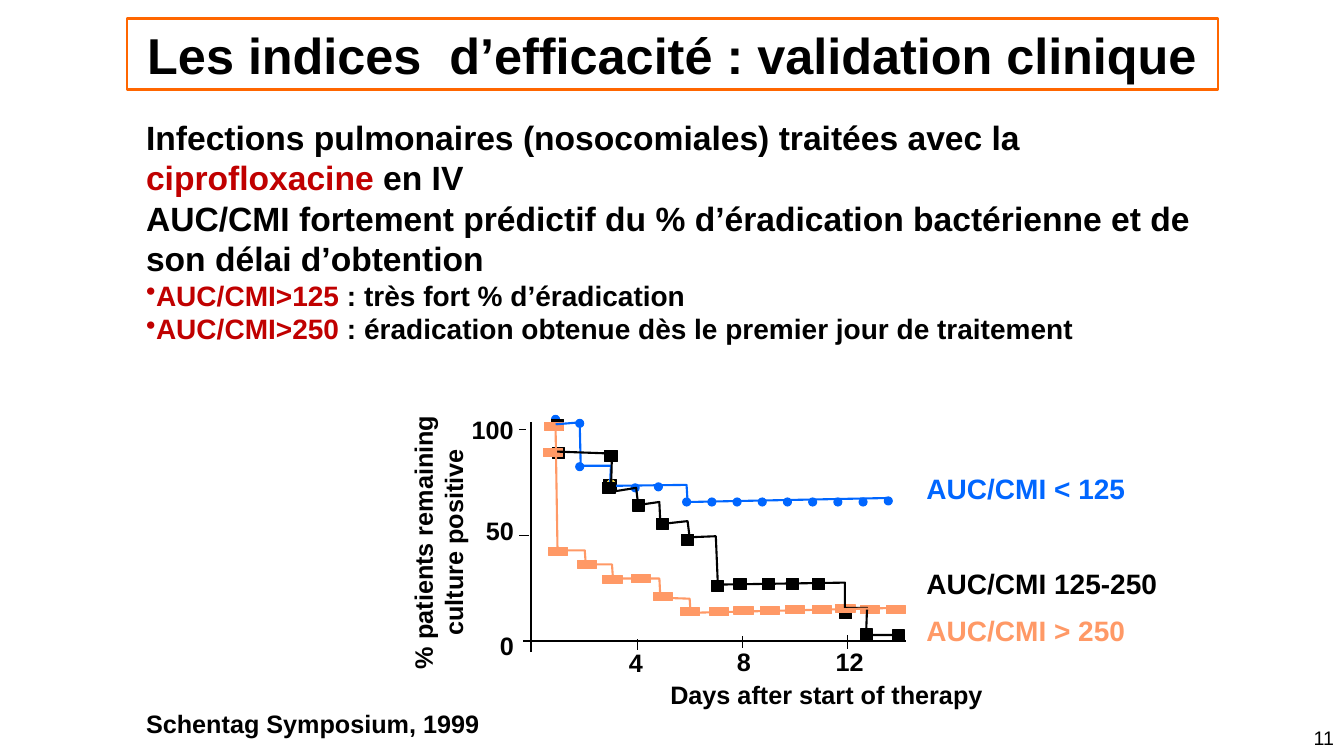
from dataclasses import dataclass

from lxml.etree import SubElement
from pptx import Presentation
from pptx.dml.color import RGBColor
from pptx.enum.shapes import MSO_CONNECTOR, MSO_SHAPE
from pptx.enum.text import MSO_ANCHOR, MSO_AUTO_SIZE, PP_ALIGN
from pptx.oxml.ns import qn
from pptx.shapes.autoshape import Shape
from pptx.slide import Slide
from pptx.text.text import _Paragraph
from pptx.util import Inches, Pt

Point = tuple[float, float]


@dataclass(frozen=True)
class Theme:
    font: str = "Arial"
    black: str = "000000"
    white: str = "FFFFFF"
    red: str = "C00000"
    blue: str = "0066FF"
    yellow: str = "FBDF53"
    peach: str = "FF9966"
    frame: str = "FF6600"
    title_size: int = 36
    body_size: int = 24
    bullet_size: int = 20
    axis_size: int = 18
    number_size: int = 14


THEME = Theme()


@dataclass(frozen=True)
class Span:
    text: str
    color: str = THEME.black


@dataclass(frozen=True)
class BodyParagraph:
    spans: tuple[Span, ...]
    size: int = THEME.body_size
    bullet: bool = False


@dataclass(frozen=True)
class Label:
    text: str
    box: tuple[float, float, float, float]
    size: int = THEME.axis_size
    color: str = THEME.black
    bold: bool = True
    wrap: bool = False
    align: PP_ALIGN = PP_ALIGN.LEFT
    rotation: int = 0
    fill: str = ""


@dataclass(frozen=True)
class Markers:
    preset: MSO_SHAPE
    width: float
    height: float
    color: str
    corners: tuple[Point, ...]


@dataclass(frozen=True)
class Curve:
    color: str
    points: tuple[Point, ...]


@dataclass(frozen=True)
class Segment:
    start: Point
    end: Point
    width: float = 0.75


def dots(color: str, *corners: Point) -> Markers:
    return Markers(MSO_SHAPE.OVAL, 0.08, 0.08, color, corners)


def squares(*corners: Point) -> Markers:
    return Markers(MSO_SHAPE.RECTANGLE, 0.12, 0.11, THEME.black, corners)


def bars(*corners: Point) -> Markers:
    return Markers(MSO_SHAPE.RECTANGLE, 0.19, 0.08, THEME.peach, corners)


BODY = (
    BodyParagraph((Span("Infections pulmonaires (nosocomiales) traitées avec la "),
                   Span("ciprofloxacine", THEME.red), Span(" en IV"))),
    BodyParagraph((Span("AUC/CMI fortement prédictif du % d’éradication bactérienne "
                        "et de son délai d’obtention"),)),
    BodyParagraph((Span("AUC/CMI>125", THEME.red), Span(" : très fort % d’éradication")),
                  THEME.bullet_size, True),
    BodyParagraph((Span("AUC/CMI>250", THEME.red),
                   Span(" : éradication obtenue dès le premier jour de traitement")),
                  THEME.bullet_size, True),
)
AXES = (
    Segment((5.27, 6.47), (5.27, 4.19), 1.5),
    Segment((5.19, 6.36), (8.99, 6.36), 1.5),
    Segment((6.32, 6.34), (6.32, 6.45)),
    Segment((7.36, 6.31), (7.36, 6.43)),
    Segment((8.41, 6.3), (8.41, 6.44)),
    Segment((5.15, 5.31), (5.25, 5.31)),
    Segment((5.15, 4.26), (5.22, 4.26)),
)
PLATEAU = tuple((6.77 + 0.25 * step, 4.94) for step in range(8))
PLOT = (
    squares((5.99, 4.76)),
    dots(THEME.yellow, (6.02, 4.76)),
    dots(THEME.blue, (5.47, 4.12), (5.71, 4.16), (5.71, 4.59), (6.26, 4.8),
         (6.49, 4.79), *PLATEAU, (8.77, 4.93)),
    squares((5.47, 4.16), (6, 4.47), (5.48, 4.44), (6.27, 4.96), (6.51, 5.14),
            (6.76, 5.3), (7.06, 5.76), (7.28, 5.74), (7.56, 5.74), (7.8, 5.74),
            (8.06, 5.74), (8.33, 6.03), (8.53, 6.24), (8.85, 6.25)),
    bars((5.39, 4.45), (5.4, 4.19), (5.44, 5.43), (5.73, 5.56), (5.98, 5.71),
         (6.26, 5.7), (6.48, 5.88), (6.75, 6.03), (7.04, 6.03), (7.28, 6.02),
         (7.54, 6.02), (7.79, 6.01), (8.06, 6.01), (8.29, 6), (8.53, 6.01), (8.79, 6.01)),
    Curve(THEME.blue, ((5.51, 4.21), (5.75, 4.19), (5.76, 4.62), (6.06, 4.62),
                       (6.05, 4.82), (6.81, 4.81), (6.82, 4.98), (8.82, 4.94))),
    squares((5.98, 4.79)),
    Curve(THEME.black, ((5.52, 4.48), (6.07, 4.5), (6.06, 4.88), (6.31, 4.84),
                        (6.33, 5.01), (6.54, 4.98), (6.55, 5.2), (6.82, 5.17),
                        (6.84, 5.33), (7.1, 5.32), (7.12, 5.8), (8.38, 5.78),
                        (8.38, 6.03), (8.6, 6.03), (8.59, 6.3), (8.92, 6.3))),
    Curve(THEME.peach, ((5.51, 4.22), (5.53, 5.46), (5.8, 5.46), (5.81, 5.6),
                        (6.07, 5.6), (6.08, 5.74), (6.54, 5.74), (6.55, 5.93),
                        (6.84, 5.94), (6.85, 6.08), (8.93, 6.03))),
)
LABELS = (
    Label("100", (4.58, 4.06, 0.62, 0.4)),
    Label("50", (4.72, 5.06, 0.48, 0.4)),
    Label("0", (4.86, 6.2, 0.34, 0.4)),
    Label("4", (6.14, 6.37, 0.34, 0.4)),
    Label("8", (7.21, 6.36, 0.34, 0.4)),
    Label("12", (8.19, 6.36, 0.48, 0.4)),
    Label("Days after start of therapy", (6.55, 6.69, 3.3, 0.4)),
    Label("% patients remaining culture positive", (2.96, 5.03, 2.77, 0.7),
          wrap=True, align=PP_ALIGN.CENTER, rotation=270),
    Label("Schentag Symposium, 1999", (1.35, 6.98, 3.51, 0.4)),
    Label("AUC/CMI < 125", (9.09, 4.63, 2.19, 0.44), THEME.bullet_size, THEME.blue),
    Label("AUC/CMI 125-250", (9.09, 5.57, 2.51, 0.44), THEME.bullet_size),
    Label("AUC/CMI > 250", (9.09, 6.04, 2.27, 0.44), THEME.bullet_size, THEME.peach,
          fill=THEME.white),
    Label("11", (9.89, 7.15, 3.44, 0.35), THEME.number_size, bold=False, wrap=True,
          align=PP_ALIGN.RIGHT),
)


def rgb(color: str) -> RGBColor:
    return RGBColor.from_string(color)


def add_span(paragraph: _Paragraph, span: Span, size: int, bold: bool = True) -> None:
    run = paragraph.add_run()
    run.text = span.text
    run.font.name, run.font.size, run.font.bold = THEME.font, Pt(size), bold
    run.font.color.rgb = rgb(span.color)


def outline(shape: Shape, color: str, width: float) -> None:
    shape.shadow.inherit = False
    shape.line.color.rgb = rgb(color)
    shape.line.width = Pt(width)


def add_title(slide: Slide, text: str) -> None:
    title = slide.shapes.title
    title.left, title.top, title.width, title.height = map(Inches, (1.26, 0.18, 10.82, 0.71))
    outline(title, THEME.frame, 2)
    frame = title.text_frame
    frame.margin_left = frame.margin_right = Inches(0.06)
    frame.vertical_anchor = MSO_ANCHOR.MIDDLE
    frame.auto_size = MSO_AUTO_SIZE.NONE
    frame.paragraphs[0].alignment = PP_ALIGN.CENTER
    add_span(frame.paragraphs[0], Span(text), THEME.title_size)


def add_body(slide: Slide) -> None:
    frame = slide.shapes.add_textbox(*map(Inches, (1.35, 1.11, 10.59, 2.73))).text_frame
    frame.word_wrap = True
    for index, item in enumerate(BODY):
        paragraph = frame.add_paragraph() if index else frame.paragraphs[0]
        if item.bullet:
            SubElement(paragraph._p.get_or_add_pPr(), qn("a:buChar"), char="•")
        for span in item.spans:
            add_span(paragraph, span, item.size)


def add_segment(slide: Slide, segment: Segment) -> None:
    connector = slide.shapes.add_connector(
        MSO_CONNECTOR.STRAIGHT, *map(Inches, segment.start + segment.end))
    connector.line.color.rgb = rgb(THEME.black)
    connector.line.width = Pt(segment.width)
    SubElement(connector._element.spPr, qn("a:effectLst"))


def add_markers(slide: Slide, markers: Markers) -> None:
    for left, top in markers.corners:
        shape = slide.shapes.add_shape(
            markers.preset, *map(Inches, (left, top, markers.width, markers.height)))
        shape.fill.solid()
        shape.fill.fore_color.rgb = rgb(markers.color)
        outline(shape, markers.color, 0.75)


def add_curve(slide: Slide, curve: Curve) -> None:
    start, *rest = [(Inches(x), Inches(y)) for x, y in curve.points]
    builder = slide.shapes.build_freeform(*start)
    builder.add_line_segments(rest, close=False)
    shape = builder.convert_to_shape()
    shape.fill.background()
    outline(shape, curve.color, 1.5)


def add_label(slide: Slide, label: Label) -> None:
    box = slide.shapes.add_textbox(*map(Inches, label.box))
    box.rotation = label.rotation
    if label.fill:
        box.fill.solid()
        box.fill.fore_color.rgb = rgb(label.fill)
    box.text_frame.word_wrap = label.wrap
    paragraph = box.text_frame.paragraphs[0]
    paragraph.alignment = label.align
    add_span(paragraph, Span(label.text, label.color), label.size, label.bold)


def main() -> None:
    presentation = Presentation()
    presentation.slide_width, presentation.slide_height = Inches(13.33), Inches(7.5)
    slide = presentation.slides.add_slide(presentation.slide_layouts[5])
    add_title(slide, "Les indices  d’efficacité : validation clinique")
    add_body(slide)
    for segment in AXES:
        add_segment(slide, segment)
    for item in PLOT:
        if isinstance(item, Markers):
            add_markers(slide, item)
        else:
            add_curve(slide, item)
    for label in LABELS:
        add_label(slide, label)
    presentation.save("out.pptx")


if __name__ == "__main__":
    main()
